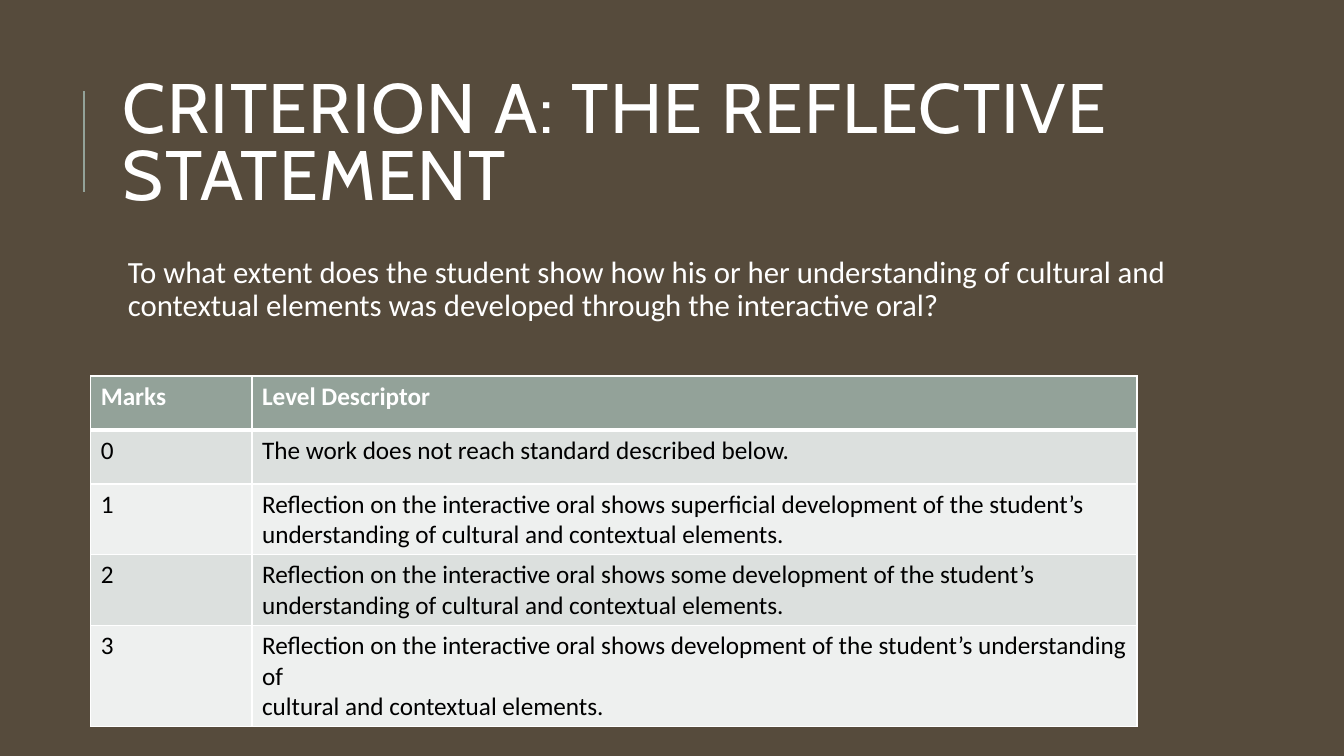
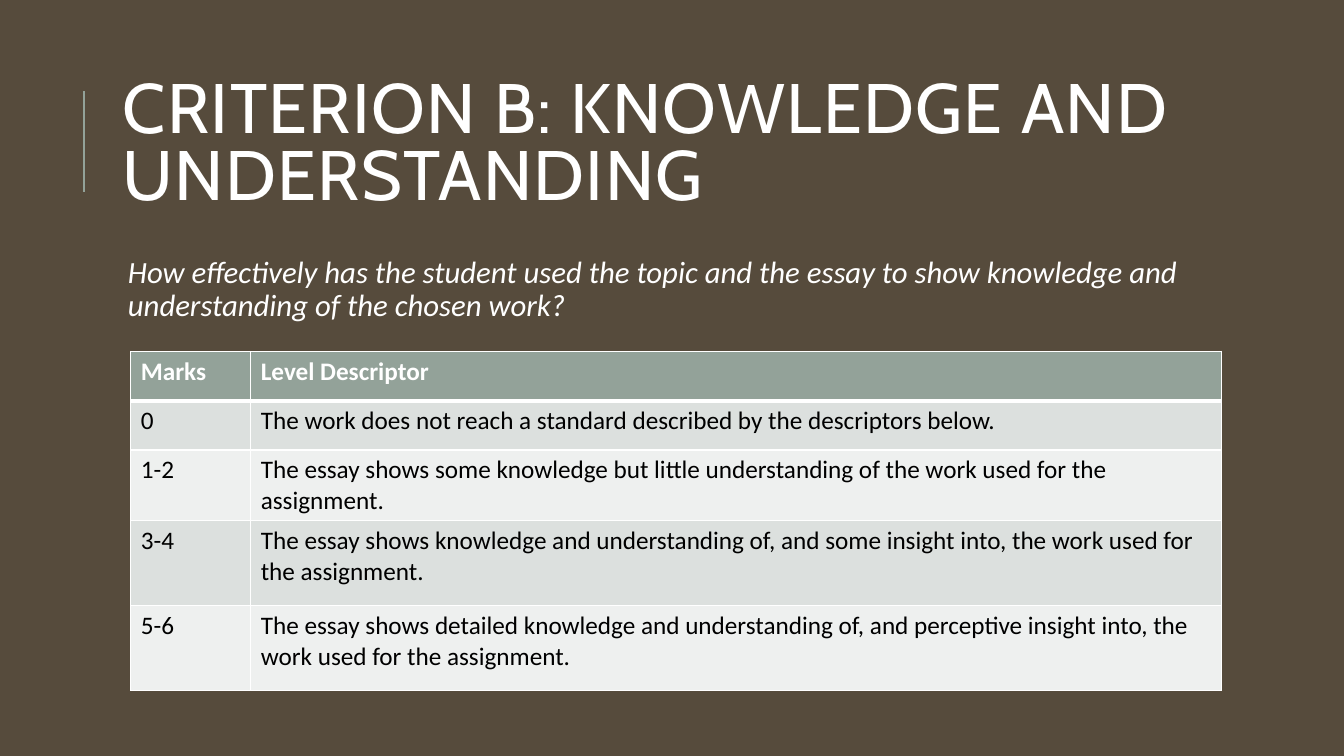
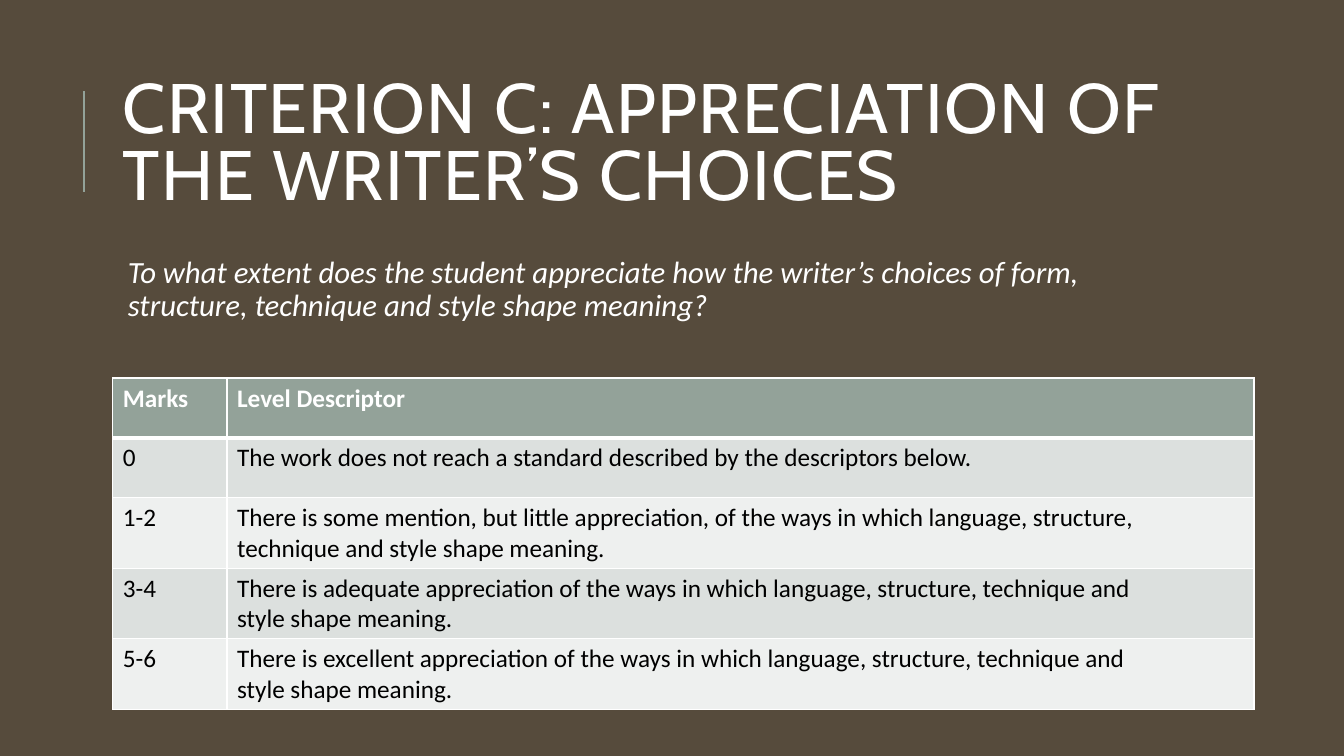
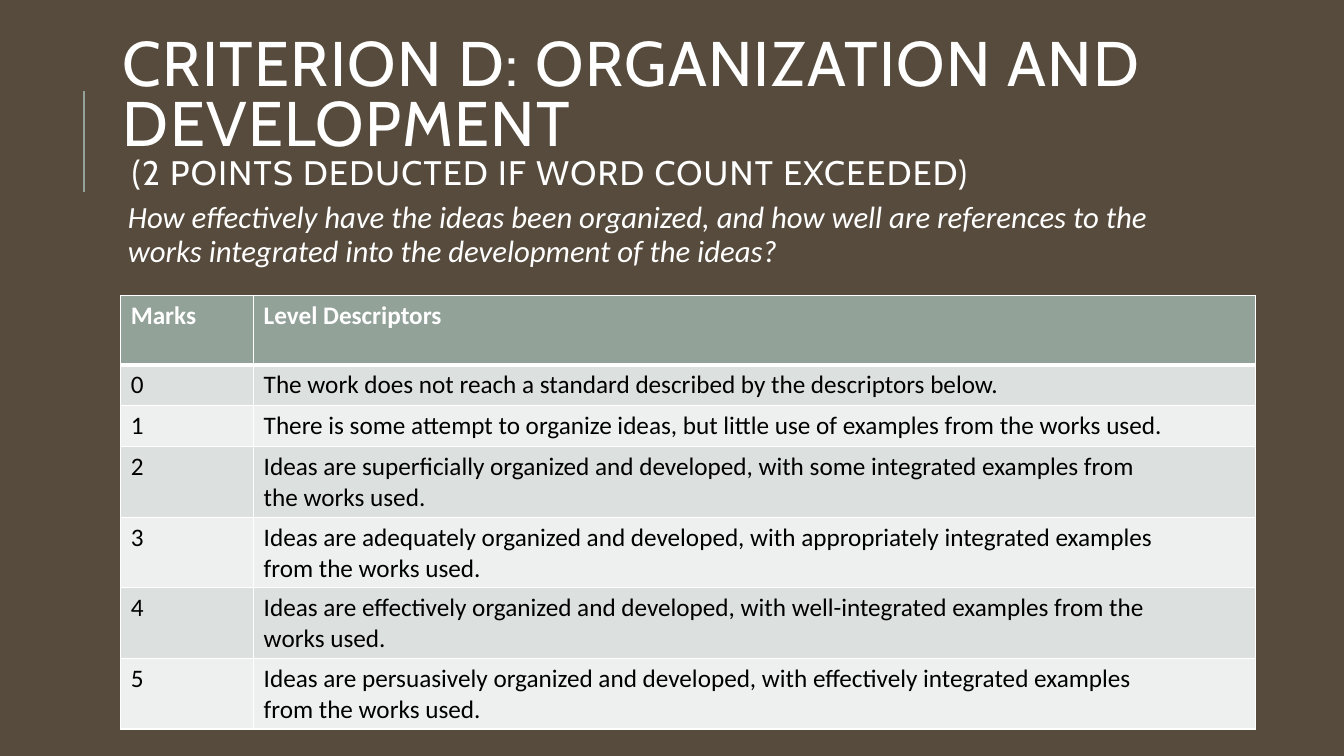
from lxml import etree
from pptx import Presentation
from pptx.dml.color import RGBColor
from pptx.enum import shapes, text
from pptx.oxml import ns
from pptx.util import Pt

BROWN = RGBColor(0x56, 0x4B, 0x3C)
SAGE = RGBColor(0x93, 0xA2, 0x99)
BAND_DARK = RGBColor(0xDC, 0xE0, 0xDE)
BAND_LIGHT = RGBColor(0xEE, 0xF0, 0xEF)
WHITE = RGBColor(0xFF, 0xFF, 0xFF)
BLACK = RGBColor(0, 0, 0)

TITLE_FONT = {"name": "Cabin"}
QUESTION_FONT = {"name": "Calibri", "size": Pt(22)}
CELL_FONT = {"name": "Calibri", "size": Pt(18)}
LEFT, WIDTH = 80.6, 765.4
TITLE_HEIGHT = 118
QUESTION_BOTTOM = 497
NO_STANDARD = ("0", "The work does not reach a standard described by the descriptors below.")

CRITERIA = [
    {
        "title": [("CRITERION A: THE REFLECTIVE STATEMENT", 50)],
        "title_top": 46,
        "question": "To what extent does the student show how his or her understanding of cultural and contextual elements was developed through the interactive oral?",
        "question_top": 180,
        "italic": False,
        "table_at": (64.8, 268.6),
        "columns": (115.2, 632.2),
        "row_heights": [38.6] * 5,
        "levels": [
            ("Marks", "Level Descriptor"),
            ("0", "The work does not reach standard described below."),
            ("1", "Reflection on the interactive oral shows superficial development of the student’s\nunderstanding of cultural and contextual elements."),
            ("2", "Reflection on the interactive oral shows some development of the student’s\nunderstanding of cultural and contextual elements."),
            ("3", "Reflection on the interactive oral shows development of the student’s understanding of\ncultural and contextual elements."),
        ],
    },
    {
        "title": [("CRITERION B: KNOWLEDGE AND UNDERSTANDING", 50)],
        "title_top": 46,
        "question": "How effectively has the student used the topic and the essay to show knowledge and understanding of the chosen work?",
        "question_top": 180,
        "italic": True,
        "table_at": (93.4, 251),
        "columns": (85.7, 693.4),
        "row_heights": [35.2] * 3 + [60.7] * 2,
        "levels": [
            ("Marks", "Level Descriptor"),
            NO_STANDARD,
            ("1-2", "The essay shows some knowledge but little understanding of the work used for the assignment."),
            ("3-4", "The essay shows knowledge and understanding of, and some insight into, the work used for the assignment."),
            ("5-6", "The essay shows detailed knowledge and understanding of, and perceptive insight into, the work used for the assignment."),
        ],
    },
    {
        "title": [("CRITERION C: APPRECIATION OF THE WRITER’S CHOICES", 50)],
        "title_top": 46,
        "question": "To what extent does the student appreciate how the writer’s choices of form, structure, technique and style shape meaning?",
        "question_top": 180,
        "italic": True,
        "table_at": (80.6, 270),
        "columns": (81.6, 733.6),
        "row_heights": [42.7] * 5,
        "levels": [
            ("Marks", "Level Descriptor"),
            NO_STANDARD,
            ("1-2", "There is some mention, but little appreciation, of the ways in which language, structure,\ntechnique and style shape meaning."),
            ("3-4", "There is adequate appreciation of the ways in which language, structure, technique and\nstyle shape meaning."),
            ("5-6", "There is excellent appreciation of the ways in which language, structure, technique and\nstyle shape meaning."),
        ],
    },
    {
        "title": [
            ("CRITERION D: ORGANIZATION AND DEVELOPMENT", 45),
            (" (2 POINTS DEDUCTED IF WORD COUNT EXCEEDED)", 24.3),
        ],
        "title_top": 23,
        "question": "How effectively have the ideas been organized, and how well are references to the works integrated into the development of the ideas?",
        "question_top": 141,
        "italic": True,
        "table_at": (86.2, 211),
        "columns": (95, 715.4),
        "row_heights": [49.5] + [29.3] * 6,
        "levels": [
            ("Marks", "Level Descriptors"),
            NO_STANDARD,
            ("1", "There is some attempt to organize ideas, but little use of examples from the works used."),
            ("2", "Ideas are superficially organized and developed, with some integrated examples from\nthe works used."),
            ("3", "Ideas are adequately organized and developed, with appropriately integrated examples\nfrom the works used."),
            ("4", "Ideas are effectively organized and developed, with well-integrated examples from the\nworks used."),
            ("5", "Ideas are persuasively organized and developed, with effectively integrated examples\nfrom the works used."),
        ],
    },
]


def apply(target, formats):
    for key, value in formats.items():
        setattr(target, key, value)


def format_font(font, formats, color):
    apply(font, formats)
    font.color.rgb = color


def place(shape, left, top, width, height):
    apply(shape, {"left": Pt(left), "top": Pt(top), "width": Pt(width), "height": Pt(height)})


def add_accent(slide, x, top, height):
    accent = slide.shapes.add_connector(
        shapes.MSO_CONNECTOR.STRAIGHT, Pt(x), Pt(top + height), Pt(x), Pt(top))
    accent.line.color.rgb = SAGE
    accent.line.width = Pt(1.5)
    etree.SubElement(accent._element.spPr, ns.qn("a:effectLst"))


def fill_title(slide, lines, left, top, width, height):
    title = slide.shapes.title
    place(title, left, top, width, height)
    apply(title.text_frame, {
        "word_wrap": True,
        "auto_size": text.MSO_AUTO_SIZE.NONE,
        "vertical_anchor": text.MSO_ANCHOR.MIDDLE,
    })
    heading = title.text_frame.paragraphs[0]
    apply(heading, {"alignment": text.PP_ALIGN.LEFT, "line_spacing": 0.8})
    for index, (words, size) in enumerate(lines):
        if index:
            heading.add_line_break()
        run = heading.add_run()
        run.text = words
        format_font(run.font, {**TITLE_FONT, "size": Pt(size)}, WHITE)
        run.font._element.set("spc", "100")


def add_question(slide, words, italic, left, top, width, height):
    frame = slide.shapes.add_textbox(Pt(left), Pt(top), Pt(width), Pt(height)).text_frame
    apply(frame, {
        "word_wrap": True,
        "margin_left": Pt(10.8),
        "margin_right": Pt(3.6),
        "margin_top": Pt(3.6),
        "margin_bottom": Pt(3.6),
    })
    question = frame.paragraphs[0]
    question.line_spacing = 0.9
    run = question.add_run()
    run.text = words
    format_font(run.font, {**QUESTION_FONT, "italic": italic}, WHITE)


def add_borders(cell, widths):
    properties = cell._tc.get_or_add_tcPr()
    for side, width in widths.items():
        border = etree.SubElement(properties, ns.qn(f"a:ln{side}"), w=str(Pt(width)))
        fill = etree.SubElement(border, ns.qn("a:solidFill"))
        etree.SubElement(fill, ns.qn("a:srgbClr"), val=str(WHITE))


def format_cell(cell, words, row):
    header = row == 0
    add_borders(cell, {"L": 1, "R": 1, "T": 3 if row == 1 else 1, "B": 3 if header else 1})
    cell.fill.solid()
    cell.fill.fore_color.rgb = SAGE if header else BAND_DARK if row % 2 else BAND_LIGHT
    cell.text = words
    for paragraph in cell.text_frame.paragraphs:
        for run in paragraph.runs:
            format_font(run.font, {**CELL_FONT, "bold": header}, WHITE if header else BLACK)


def add_levels(slide, levels, columns, row_heights, left, top):
    table = slide.shapes.add_table(
        len(levels), len(columns), Pt(left), Pt(top),
        Pt(sum(columns)), Pt(sum(row_heights))).table
    table.horz_banding = False
    for column, width in zip(table.columns, columns):
        column.width = Pt(width)
    for row, (level, height) in enumerate(zip(levels, row_heights)):
        table.rows[row].height = Pt(height)
        for column, words in enumerate(level):
            format_cell(table.cell(row, column), words, row)


def add_criterion(prs, criterion):
    slide = prs.slides.add_slide(prs.slide_layouts[5])
    add_accent(slide, 60, 65, 72)
    fill_title(slide, criterion["title"], LEFT, criterion["title_top"], WIDTH, TITLE_HEIGHT)
    top = criterion["question_top"]
    add_question(slide, criterion["question"], criterion["italic"],
                 LEFT, top, WIDTH, QUESTION_BOTTOM - top)
    add_levels(slide, criterion["levels"], criterion["columns"],
               criterion["row_heights"], *criterion["table_at"])


def main():
    prs = Presentation()
    apply(prs, {"slide_width": Pt(960), "slide_height": Pt(540)})
    background = prs.slide_master.background.fill
    background.solid()
    background.fore_color.rgb = BROWN
    for criterion in CRITERIA:
        add_criterion(prs, criterion)
    prs.save("out.pptx")


if __name__ == "__main__":
    main()
